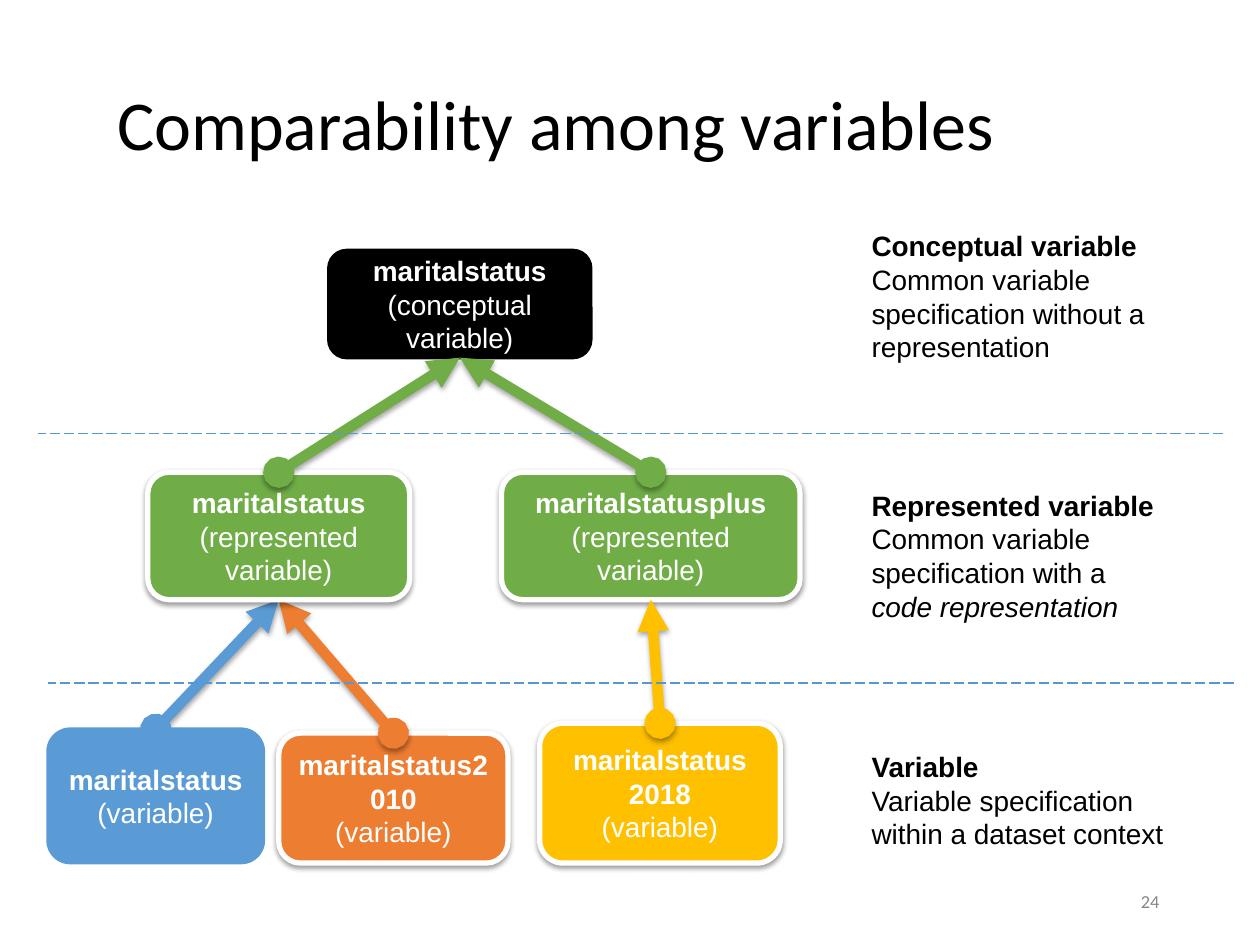
from dataclasses import dataclass

import pptx
import pptx.dml.color
import pptx.enum.dml
import pptx.enum.shapes
import pptx.enum.text
import pptx.oxml
import pptx.oxml.ns
import pptx.util

Cm = pptx.util.Cm
Pt = pptx.util.Pt
Align = pptx.enum.text.PP_ALIGN


@dataclass(frozen=True)
class Theme:
    black: str = "000000"
    white: str = "FFFFFF"
    green: str = "70AD47"
    blue: str = "5B9BD5"
    orange: str = "ED7D31"
    yellow: str = "FFC000"
    divider: str = "5698D3"
    grey: str = "888888"
    heading_font: str = "Calibri"
    body_font: str = "Arial"
    title_size: float = 40
    body_size: float = 16
    number_size: float = 10.5


@dataclass(frozen=True)
class Box:
    left: float
    top: float
    width: float
    height: float

    def within(self, outer):
        return Box(outer.left + self.left, outer.top + self.top, self.width, self.height)

    def lengths(self):
        return [Cm(value) for value in (self.left, self.top, self.width, self.height)]

    def top_center(self):
        return self.left + self.width / 2, self.top

    def bottom_center(self):
        return self.left + self.width / 2, self.top + self.height


THEME = Theme()
BREAK = "\n"


def color(value):
    return pptx.dml.color.RGBColor.from_string(value)


def add_effects(properties, opacity=0, blur=3.1, distance=1.8):
    namespace = pptx.oxml.ns.nsdecls("a")
    shadow = (
        f'<a:outerShdw blurRad="{Pt(blur)}" dist="{Pt(distance)}" dir="5400000" rotWithShape="0">'
        f'<a:srgbClr val="{THEME.black}"><a:alpha val="{opacity * 1000}"/></a:srgbClr></a:outerShdw>'
    )
    content = shadow if opacity else ""
    properties.append(pptx.oxml.parse_xml(f"<a:effectLst {namespace}>{content}</a:effectLst>"))


def write_text(shape, paragraphs, ink, size=THEME.body_size, font=THEME.body_font,
               align=Align.LEFT, spacing=None, shadow=0):
    frame = shape.text_frame
    frame.word_wrap = True
    frame.vertical_anchor = pptx.enum.text.MSO_ANCHOR.MIDDLE
    for index, runs in enumerate(paragraphs):
        paragraph = frame.add_paragraph() if index else frame.paragraphs[0]
        paragraph.alignment = align
        paragraph.line_spacing = spacing
        for text, style in runs:
            if text == BREAK:
                paragraph.add_line_break()
                continue
            run = paragraph.add_run()
            run.text = text
            if shadow:
                add_effects(run.font._element, shadow)
            run.font.name = font
            run.font.size = Pt(size)
            run.font.bold = style == "bold"
            run.font.italic = style == "italic"
            run.font.color.rgb = color(ink)


def add_line(slide, start, end, ink, width):
    ends = [Cm(value) for value in (*start, *end)]
    line = slide.shapes.add_connector(pptx.enum.shapes.MSO_CONNECTOR.STRAIGHT, *ends)
    line.line.color.rgb = color(ink)
    line.line.width = Pt(width)
    return line


def draw_heading(slide, box):
    shape = slide.shapes.add_textbox(*box.lengths())
    shape.text_frame.margin_left = shape.text_frame.margin_right = Cm(0.28)
    write_text(shape, [[("Comparability among variables", "")]], THEME.black,
               THEME.title_size, THEME.heading_font, spacing=0.9)


def draw_page_number(slide, box):
    shape = slide.shapes.add_textbox(*box.lengths())
    shape.text_frame.margin_left = shape.text_frame.margin_right = Cm(0.28)
    write_text(shape, [[("24", "")]], THEME.grey, THEME.number_size,
               THEME.heading_font, Align.RIGHT)


def draw_node(slide, box, fill, lines, raised):
    shape = slide.shapes.add_shape(
        pptx.enum.shapes.MSO_SHAPE.ROUNDED_RECTANGLE, *box.lengths())
    shape.fill.solid()
    shape.fill.fore_color.rgb = color(fill)
    shape.line.color.rgb = color(THEME.white if raised else fill)
    shape.line.width = Pt(3 if raised else 2)
    if raised:
        add_effects(shape._element.spPr, opacity=38, distance=1.6)
    else:
        shape.shadow.inherit = False
    *names, kind = lines
    runs = []
    for name in names:
        runs += [(name, "bold"), (BREAK, "")]
    write_text(shape, [runs + [(kind, "")]], THEME.white, align=Align.CENTER)


def draw_link(slide, child, parent, ink):
    link = add_line(slide, child.top_center(), parent.bottom_center(), ink, 6)
    outline = link.line._get_or_add_ln()
    namespace = pptx.oxml.ns.nsdecls("a")
    for end, kind in (("headEnd", "oval"), ("tailEnd", "triangle")):
        outline.append(pptx.oxml.parse_xml(f'<a:{end} {namespace} type="{kind}"/>'))
    add_effects(link._element.spPr, opacity=35)


def draw_tree(slide, box):
    represented = "(represented variable)"
    nodes = {
        "concept": (Box(5.66, 0, 5.28, 2.16), THEME.black,
                    ["maritalstatus", "(conceptual variable)"], False),
        "basic": (Box(2.01, 4.47, 5.28, 2.57), THEME.green,
                  ["maritalstatus", represented], True),
        "plus": (Box(9.14, 4.47, 6.02, 2.57), THEME.green,
                 ["maritalstatusplus", represented], True),
        "plain": (Box(0, 9.65, 4.34, 2.69), THEME.blue,
                  ["maritalstatus", "(variable)"], False),
        "2010": (Box(4.65, 9.73, 4.62, 2.62), THEME.orange,
                 ["maritalstatus2010", "(variable)"], True),
        "2018": (Box(9.91, 9.53, 4.85, 2.82), THEME.yellow,
                 ["maritalstatus", "2018", "(variable)"], True),
    }
    stacking = ["concept", "2010", ("2010", "basic"), ("plain", "basic"), "basic", "plain",
                ("basic", "concept"), "2018", "plus", ("2018", "plus"), ("plus", "concept")]
    for item in stacking:
        if isinstance(item, tuple):
            child, parent = (nodes[name][0].within(box) for name in item)
            draw_link(slide, child, parent, nodes[item[0]][1])
        else:
            place, fill, lines, raised = nodes[item]
            draw_node(slide, place.within(box), fill, lines, raised)


def draw_dividers(slide, box):
    for left, top in ((0, 0), (0.21, 5.03)):
        place = Box(left, top, 23.9, 0).within(box)
        line = add_line(slide, (place.left + place.width, place.top),
                        (place.left, place.top), THEME.divider, 0.75)
        line.line.dash_style = pptx.enum.dml.MSO_LINE.LONG_DASH
        add_effects(line._element.spPr)


def draw_explanations(slide, box):
    explanations = [
        (0, "Conceptual variable",
         [("Common variable specification without a representation", "")]),
        (5.23, "Represented variable",
         [("Common variable specification with a ", ""), ("code representation", "italic")]),
        (10.16, "Variable", [("Variable specification within a dataset context", "")]),
    ]
    for top, heading, body in explanations:
        shape = slide.shapes.add_textbox(*Box(0, top, box.width, 3.1).within(box).lengths())
        write_text(shape, [[(heading, "bold")], body], THEME.black, shadow=43)


def main():
    presentation = pptx.Presentation()
    presentation.slide_width, presentation.slide_height = Cm(25.4), Cm(19.05)
    slide = presentation.slides.add_slide(presentation.slide_layouts[6])
    draw_heading(slide, Box(2.08, 0.74, 22.58, 3.68))
    draw_tree(slide, Box(0.97, 5.05, 15.16, 12.35))
    draw_dividers(slide, Box(0.76, 8.74, 24.11, 5.03))
    draw_explanations(slide, Box(17.32, 4.42, 6.58, 13.26))
    draw_page_number(slide, Box(17.93, 17.65, 5.72, 1.02))
    presentation.save("out.pptx")


if __name__ == "__main__":
    main()
